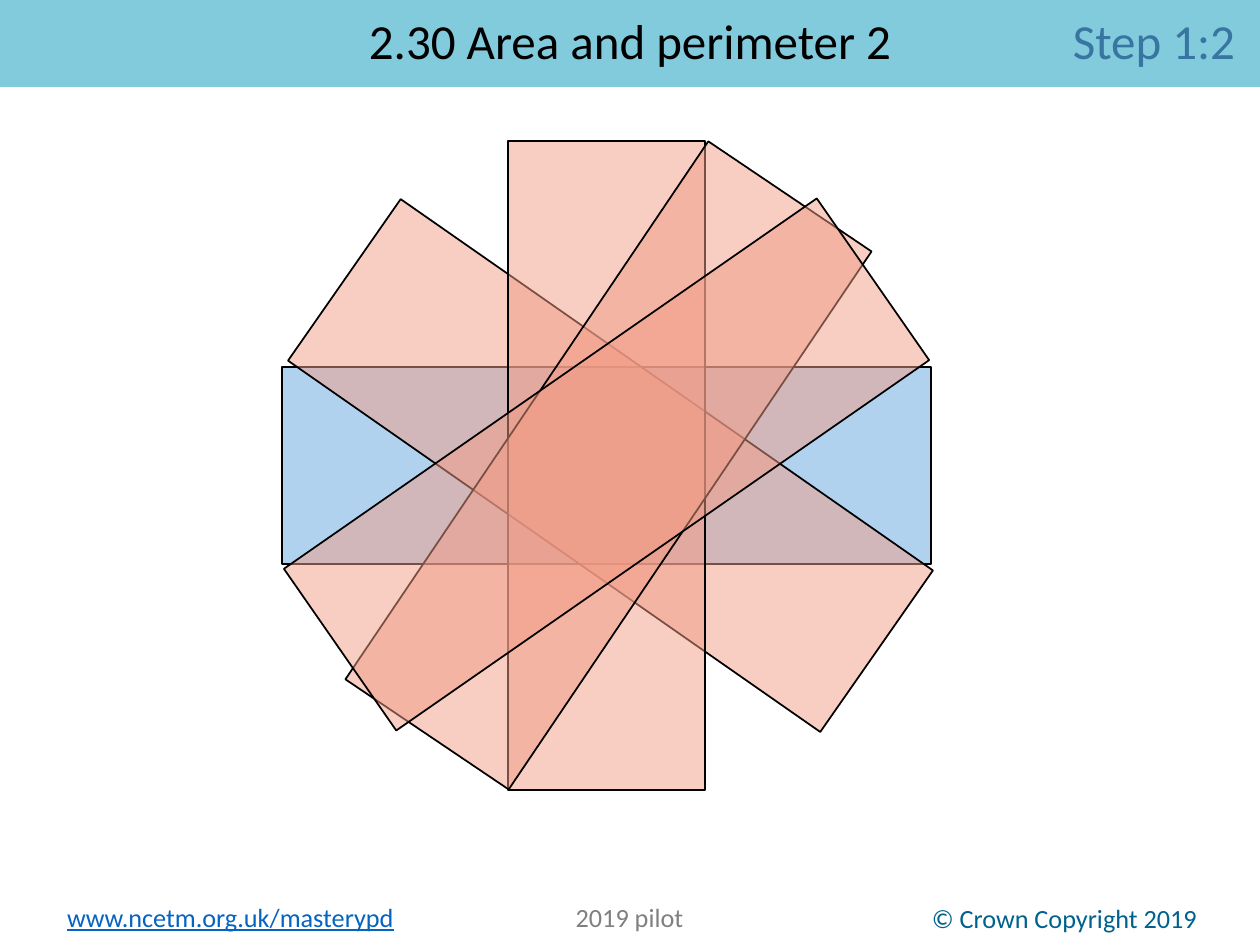
from dataclasses import dataclass

import pptx
import pptx.dml.color
import pptx.enum.shapes
import pptx.enum.text
import pptx.util
from lxml import etree
from pptx.oxml.ns import qn

PX = 914400 / 126
ALIGN = pptx.enum.text.PP_ALIGN
ANCHOR = pptx.enum.text.MSO_ANCHOR
RECTANGLE = pptx.enum.shapes.MSO_SHAPE.RECTANGLE

SLIDE_WIDTH, SLIDE_HEIGHT = 1260, 945
BANNER_HEIGHT = 87
STRIP_WIDTH, STRIP_HEIGHT = 197, 649
BLUE, SALMON = "B1D2EF", "F29D86"


@dataclass(frozen=True)
class Strip:
    """One of the equal rectangles, turned about its own centre."""
    left: int
    top: int
    angle: float
    fill: str = SALMON
    opacity: int = 50


@dataclass(frozen=True)
class Footer:
    text: str
    left: int
    top: int
    color: str
    align: ALIGN
    underline: bool = False
    margin_right: int = 13


BASE_STRIP = Strip(508, 141, 90, BLUE, 100)
TURNED_STRIPS = [
    Strip(512, 141, 304.9),
    Strip(508, 141, 0),
    Strip(510, 141, 34),
    Strip(508, 140, 55.2),
]
FOOTERS = [
    Footer("© Crown Copyright 2019", 828, 896, "00628C", ALIGN.RIGHT, margin_right=18),
    Footer("www.ncetm.org.uk/masterypd", 54, 895, "0563C1", ALIGN.LEFT, underline=True),
    Footer("2019 pilot", 436, 895, "808080", ALIGN.CENTER),
]


def px(length: float) -> int:
    return round(length * PX)


def rgb(color: str) -> pptx.dml.color.RGBColor:
    return pptx.dml.color.RGBColor.from_string(color)


def add_rectangle(page, left: int, top: int, width: int, height: int, fill: str):
    shape = page.shapes.add_shape(RECTANGLE, px(left), px(top), px(width), px(height))
    shape.shadow.inherit = False
    shape.fill.solid()
    shape.fill.fore_color.rgb = rgb(fill)
    return shape


def add_strip(page, strip: Strip) -> None:
    shape = add_rectangle(page, strip.left, strip.top, STRIP_WIDTH, STRIP_HEIGHT, strip.fill)
    shape.rotation = strip.angle
    shape.line.color.rgb = rgb("000000")
    shape.line.width = pptx.util.Pt(1)
    if strip.opacity < 100:
        color = shape.fill._xPr.find(qn("a:solidFill"))[0]
        etree.SubElement(color, qn("a:alpha"), val=str(strip.opacity * 1000))


def write_text(shape, text: str, *, size: int, color: str, align: ALIGN,
               anchor: ANCHOR = ANCHOR.TOP, margin_left: int = 13, margin_right: int = 13,
               line_spacing: float = 1.0, underline: bool = False) -> None:
    frame = shape.text_frame
    frame.word_wrap = True
    frame.vertical_anchor = anchor
    frame.margin_left, frame.margin_right = px(margin_left), px(margin_right)
    para = frame.paragraphs[0]
    para.alignment = align
    para.line_spacing = line_spacing
    span = para.add_run()
    span.text = text
    span.font.name = "Calibri"
    span.font.size = pptx.util.Pt(size)
    span.font.color.rgb = rgb(color)
    if underline:
        span.font.underline = True


def add_footer(page, footer: Footer) -> None:
    box = page.shapes.add_textbox(px(footer.left), px(footer.top), px(387), px(44))
    write_text(box, footer.text, size=15, color=footer.color, align=footer.align,
               underline=footer.underline, margin_right=footer.margin_right)


def add_banner(page) -> None:
    heading = dict(size=28, anchor=ANCHOR.MIDDLE, margin_left=25, margin_right=25,
                   line_spacing=0.9)
    banner = add_rectangle(page, 0, 0, SLIDE_WIDTH, BANNER_HEIGHT, "82CBDD")
    banner.line.fill.background()
    write_text(banner, "2.30 Area and perimeter 2", color="000000",
               align=ALIGN.CENTER, **heading)
    step = page.shapes.add_textbox(0, 0, px(SLIDE_WIDTH), px(BANNER_HEIGHT))
    write_text(step, "Step 1:2", color="3875A1", align=ALIGN.RIGHT, **heading)


def main() -> None:
    deck = pptx.Presentation()
    deck.slide_width, deck.slide_height = px(SLIDE_WIDTH), px(SLIDE_HEIGHT)
    page = deck.slides.add_slide(deck.slide_layouts[6])
    for footer in FOOTERS:
        add_footer(page, footer)
    add_strip(page, BASE_STRIP)
    add_banner(page)
    for strip in TURNED_STRIPS:
        add_strip(page, strip)
    deck.save("out.pptx")


if __name__ == "__main__":
    main()
